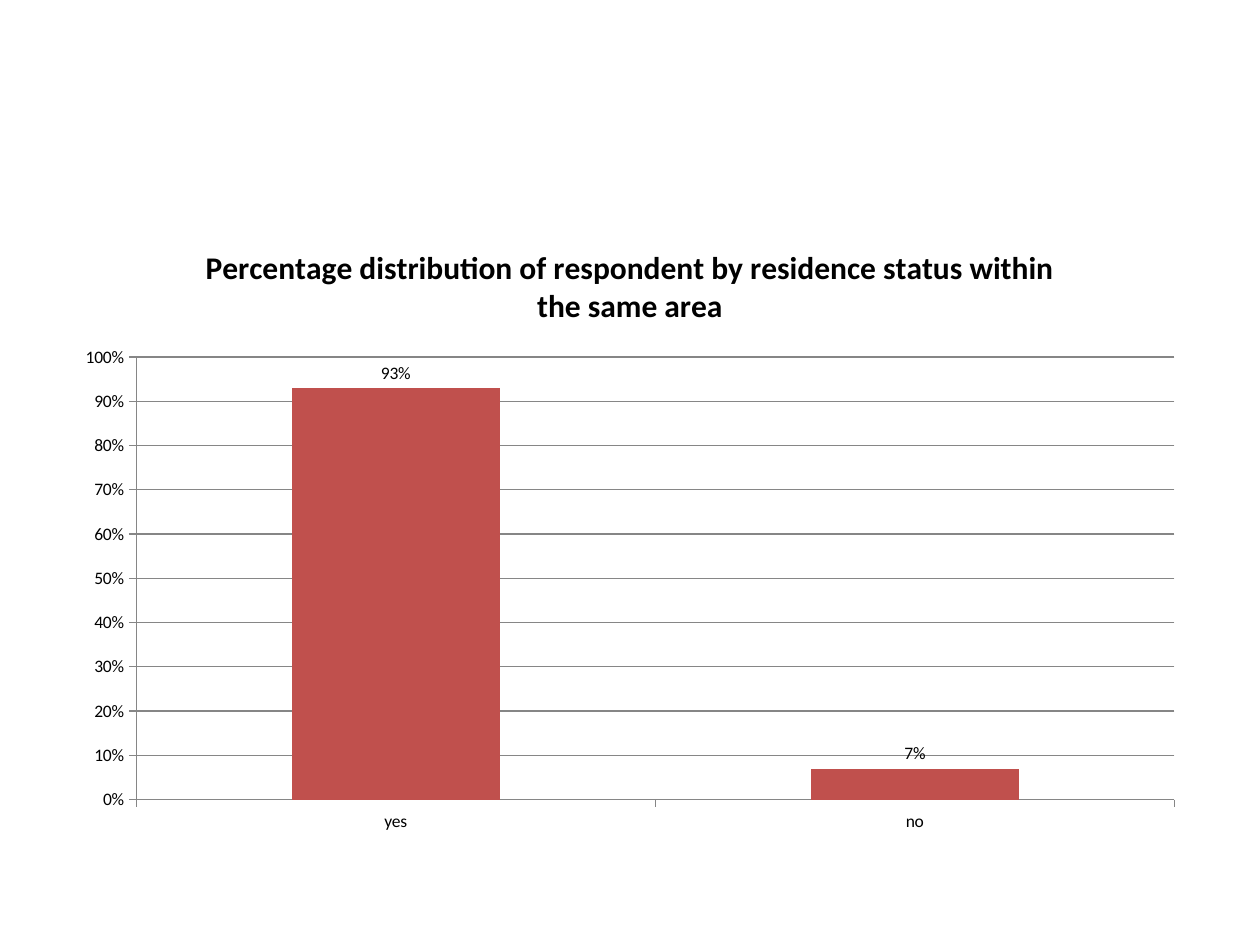
from pptx import Presentation, util as u
from pptx.chart.data import CategoryChartData
from pptx.dml.color import RGBColor
from pptx.enum import chart as ch

TITLE = "Percentage distribution of respondent by residence status within the same area"
SHARES = {"yes": 0.93, "no": 0.07}
FONT = "Calibri"
RED = RGBColor(0xC0, 0x50, 0x4D)
GREY = RGBColor(0x86, 0x86, 0x86)
BLACK = RGBColor(0, 0, 0)
WIDTH, HEIGHT = u.Inches(10), u.Inches(7.5)


def style(font, size=10, bold=False, color=BLACK):
    font.name, font.size, font.bold = FONT, u.Pt(size), bold
    font.color.rgb = color


def put_text(frame, words, **form):
    frame.text = words
    style(frame.paragraphs[0].runs[0].font, **form)


def rule(line):
    line.color.rgb, line.width = GREY, u.Pt(0.75)


def add_bars(slide):
    data = CategoryChartData(number_format="0%")
    data.categories = list(SHARES)
    data.add_series("Series 1", list(SHARES.values()))
    box = [int(WIDTH * 0.05), u.Inches(1.75), int(WIDTH * 0.9), int(HEIGHT * 0.66)]
    chart = slide.shapes.add_chart(
        ch.XL_CHART_TYPE.COLUMN_CLUSTERED, *box, data).chart
    style(chart.font)
    chart.has_legend = False
    chart.has_title = True
    put_text(chart.chart_title.text_frame, TITLE, size=18, bold=True)
    chart.chart_title.include_in_layout = False

    for axis in (chart.category_axis, chart.value_axis):
        axis.major_tick_mark = ch.XL_TICK_MARK.OUTSIDE
        axis.minor_tick_mark = ch.XL_TICK_MARK.NONE
        rule(axis.format.line)
    scale = chart.value_axis
    scale.minimum_scale, scale.maximum_scale, scale.major_unit = 0, 1, 0.1
    scale.has_major_gridlines = True
    rule(scale.major_gridlines.format.line)
    scale.tick_labels.number_format = "0%"
    scale.tick_labels.number_format_is_linked = False

    plot = chart.plots[0]
    plot.vary_by_categories = False
    plot.gap_width = 150
    bars = plot.series[0]
    bars.format.fill.solid()
    bars.format.fill.fore_color.rgb = RED
    tags = bars.data_labels
    tags.show_value = True
    tags.position = ch.XL_LABEL_POSITION.OUTSIDE_END
    tags.number_format = "0%"
    tags.number_format_is_linked = False
    style(tags.font)


def main():
    deck = Presentation()
    deck.slide_width, deck.slide_height = WIDTH, HEIGHT
    add_bars(deck.slides.add_slide(deck.slide_layouts[6]))
    deck.save("out.pptx")


if __name__ == "__main__":
    main()
